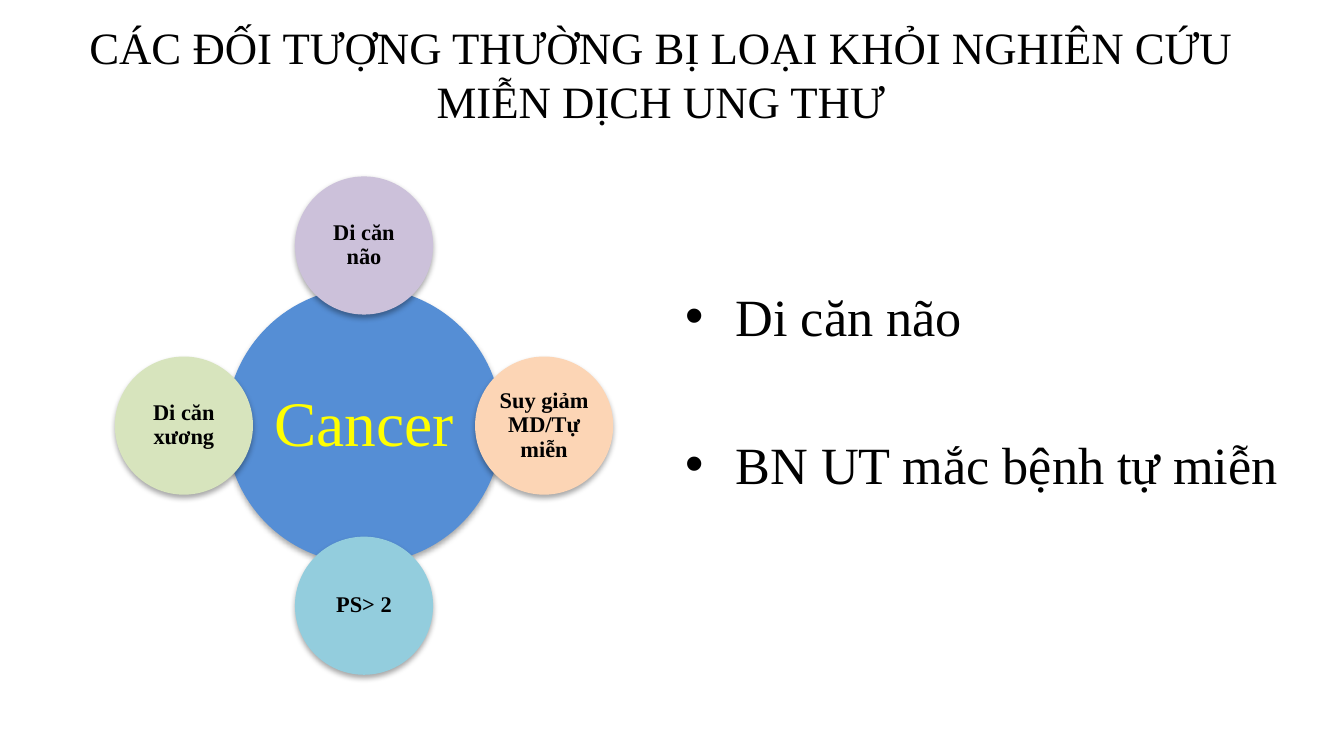
from lxml import etree
from pptx import Presentation
from pptx.dml.color import RGBColor
from pptx.enum import shapes, text
from pptx.oxml.ns import qn
from pptx.util import Pt

HEX = {"ink": "000000", "hub": "558ED5", "word": "FFFF00", "top": "CCC1DA",
       "right": "FCD5B5", "low": "93CDDD", "left": "D7E4BD"}
FACE = "Times New Roman"
# Label, colour, and direction from the hub
MOONS = [("Di căn não", "top", 0, -1), ("Suy giảm MD/Tự miễn", "right", 1, 0),
         ("PS> 2", "low", 0, 1), ("Di căn xương", "left", -1, 0)]


def color(name):
    return RGBColor.from_string(HEX[name])


def assign(obj, **vals):
    for key, val in vals.items():
        setattr(obj, key, val)


def style(para, size, ink="ink", bold=False, **vals):
    assign(para.font, name=FACE, size=Pt(size), bold=bold)
    para.font.color.rgb = color(ink)
    assign(para, **vals)


def inset(frame, left, top, right, base):
    assign(frame, word_wrap=True, margin_left=Pt(left), margin_top=Pt(top),
           margin_right=Pt(right), margin_bottom=Pt(base))


def shade(shape):
    """Add a soft shadow below the shape."""
    shape.shadow.inherit = False
    effects = shape._element.spPr.find(qn("a:effectLst"))
    glow = etree.SubElement(effects, qn("a:outerShdw"), blurRad=str(Pt(3.1)),
                            dist=str(Pt(1.8)), dir="5400000", rotWithShape="0")
    tint = etree.SubElement(glow, qn("a:srgbClr"), val=HEX["ink"])
    etree.SubElement(tint, qn("a:alpha"), val="35000")


def disc(slide, mid_x, mid_y, width, fill, label, pad, **font):
    """Draw a labelled circle around its centre."""
    shape = slide.shapes.add_shape(
        shapes.MSO_SHAPE.OVAL, Pt(mid_x - width / 2), Pt(mid_y - width / 2),
        Pt(width), Pt(width))
    shape.fill.solid()
    shape.fill.fore_color.rgb = color(fill)
    shape.line.fill.background()
    shade(shape)
    frame = shape.text_frame
    inset(frame, pad, pad, pad, pad)
    frame.vertical_anchor = text.MSO_ANCHOR.MIDDLE
    frame.text = label
    style(frame.paragraphs[0], alignment=text.PP_ALIGN.CENTER,
          line_spacing=0.9, **font)


def ring(slide, x, y, side):
    hub, moon = 148, 74
    mid_x, mid_y, orbit = x + side / 2, y + side / 2, (side - moon) / 2
    disc(slide, mid_x, mid_y, hub, "hub", "Cancer", 3.6, size=34, ink="word")
    for label, fill, dx, dy in MOONS:
        disc(slide, mid_x + dx * orbit, mid_y + dy * orbit, moon, fill,
             label, 1.5, size=12, bold=True)


def title(slide, x, y, w, h):
    frame = slide.shapes.add_textbox(Pt(x), Pt(y), Pt(w), Pt(h)).text_frame
    inset(frame, 7.2, 0, 7.2, 26)
    frame.vertical_anchor = text.MSO_ANCHOR.MIDDLE
    frame.text = "CÁC ĐỐI TƯỢNG THƯỜNG BỊ LOẠI KHỎI NGHIÊN CỨU\vMIỄN DỊCH UNG THƯ"
    style(frame.paragraphs[0], 24, alignment=text.PP_ALIGN.CENTER)


def points(slide, x, y, w, h):
    frame = slide.shapes.add_textbox(Pt(x), Pt(y), Pt(w), Pt(h)).text_frame
    inset(frame, 7.2, 3.6, 7.2, 3.6)
    frame.text = "Di căn não\nBN UT mắc bệnh tự miễn"
    for para, gap in zip(frame.paragraphs, (5.6, 46)):
        style(para, 28, space_before=Pt(gap))
        props = para._p.get_or_add_pPr()
        props.set("marL", str(Pt(27)))
        props.set("indent", str(Pt(-27)))
        bullet = etree.Element(qn("a:buChar"), char="•")
        props.find(qn("a:spcBef")).addnext(bullet)
        bullet.addprevious(etree.Element(qn("a:buFont"), typeface="Arial"))


def main():
    deck = Presentation()
    assign(deck, slide_width=Pt(720), slide_height=Pt(405))
    slide = deck.slides.add_slide(deck.slide_layouts[6])
    title(slide, 12, 16.5, 684, 72)
    ring(slide, 61.5, 94.5, 267)
    points(slide, 360, 148.5, 342, 225)
    deck.save("out.pptx")


if __name__ == "__main__":
    main()
